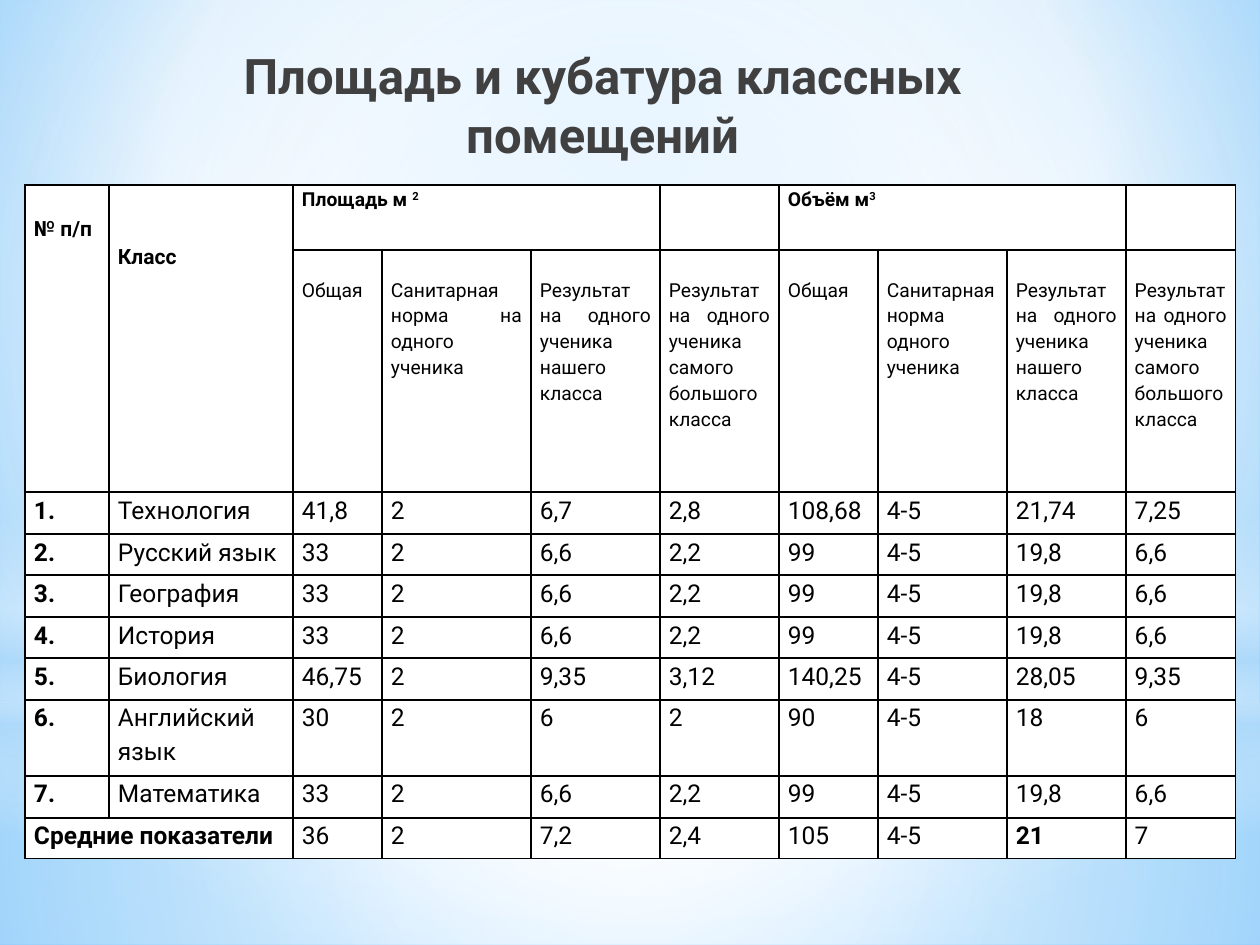
from lxml.etree import SubElement
from pptx import Presentation
from pptx.dml.color import RGBColor
from pptx.enum.shapes import MSO_SHAPE as Preset
from pptx.enum.text import MSO_ANCHOR as Anchor, MSO_AUTO_SIZE as AutoSize, PP_ALIGN as Align
from pptx.oxml.ns import qn
from pptx.util import Pt

EMU_PER_PX = 914400 / 126

COLUMN_WIDTHS = [84, 184, 89, 149, 129, 119, 99, 129, 119, 110]
ROW_HEIGHTS = [65, 242, 42, 41, 42, 41, 42, 76, 42, 41]

OUR_CLASS = "Результат на одного ученика нашего класса"
LARGEST_CLASS = "Результат на одного ученика самого большого класса"
MEASURES = [
    "Общая", "Санитарная норма на одного ученика", OUR_CLASS, LARGEST_CLASS,
    "Общая", "Санитарная норма одного ученика", OUR_CLASS, LARGEST_CLASS,
]
TYPICAL_ROOM = ["33", "2", "6,6", "2,2", "99", "4-5", "19,8", "6,6"]
ROOMS = [
    ("Технология", ["41,8", "2", "6,7", "2,8", "108,68", "4-5", "21,74", "7,25"]),
    ("Русский язык", TYPICAL_ROOM),
    ("География", TYPICAL_ROOM),
    ("История", TYPICAL_ROOM),
    ("Биология", ["46,75", "2", "9,35", "3,12", "140,25", "4-5", "28,05", "9,35"]),
    ("Английский язык", ["30", "2", "6", "2", "90", "4-5", "18", "6"]),
    ("Математика", TYPICAL_ROOM),
]
AVERAGES = ["36", "2", "7,2", "2,4", "105", "4-5", "21", "7"]


def px(length):
    return round(length * EMU_PER_PX)


def rgb(hex_color):
    return RGBColor.from_string(hex_color)


def add_gradient(parent, stops, focus=None):
    """Append a gradient of (position, colour, opacity) percentages.

    focus is the left, top, right, bottom inset of a circular gradient's centre;
    without it the gradient runs from top to bottom.
    """
    gradient = SubElement(parent, qn("a:gradFill"), rotWithShape="1")
    stop_list = SubElement(gradient, qn("a:gsLst"))
    for position, color, opacity in stops:
        stop = SubElement(stop_list, qn("a:gs"), pos=str(position * 1000))
        tint = SubElement(stop, qn("a:srgbClr"), val=color)
        if opacity < 100:
            SubElement(tint, qn("a:alpha"), val=str(opacity * 1000))
    if focus:
        circle = SubElement(gradient, qn("a:path"), path="circle")
        insets = {side: str(inset * 1000) for side, inset in zip("ltrb", focus)}
        SubElement(circle, qn("a:fillToRect"), insets)
    else:
        SubElement(gradient, qn("a:lin"), ang="5400000", scaled="0")
    return gradient


class RoomSlide:
    font = "Roboto"
    ink = "000000"
    title_ink = "404040"
    paper = "FFFFFF"
    center = (50, 50, 50, 50)

    def __init__(self, presentation):
        self.slide = presentation.slides.add_slide(presentation.slide_layouts[5])

    def background(self, stops, focus):
        fill = self.slide.background.fill
        fill.solid()
        properties = self.slide._element.cSld.bg.bgPr
        solid = properties.find(qn("a:solidFill"))
        properties.replace(solid, add_gradient(properties, stops, focus))

    def glow(self, preset, top, height, stops, focus=None):
        """Add a full-width translucent band or ellipse."""
        glow = self.slide.shapes.add_shape(preset, 0, px(top), px(1260), px(height))
        glow.shadow.inherit = False
        glow.line.fill.background()
        glow.fill.solid()
        properties = glow._element.spPr
        solid = properties.find(qn("a:solidFill"))
        properties.replace(solid, add_gradient(properties, stops, focus))

    def title(self, text, left, top, width, height):
        title = self.slide.shapes.title
        self.slide.shapes._spTree.append(title._element)  # in front of the glows
        title.left, title.top, title.width, title.height = map(px, (left, top, width, height))
        frame = title.text_frame
        frame.text = text
        frame.word_wrap = True
        frame.auto_size = AutoSize.NONE
        frame.vertical_anchor = Anchor.TOP
        frame.margin_top = px(9)
        heading = frame.paragraphs[0]
        heading.alignment = Align.CENTER
        self.style(heading.font, 28, True, self.title_ink)

    def style(self, font, size, bold, color):
        font.name, font.size, font.bold = self.font, Pt(size), bold
        font.color.rgb = rgb(color)

    def table(self, left, top, widths, heights):
        frame = self.slide.shapes.add_table(
            len(heights), len(widths), px(left), px(top), px(sum(widths)), px(sum(heights)))
        table = frame.table
        table.first_row = table.horz_banding = False
        for column, width in zip(table.columns, widths):
            column.width = px(width)
        for row, height in zip(table.rows, heights):
            row.height = px(height)
        for cell in table.iter_cells():
            self.frame_cell(cell)
        return table

    def frame_cell(self, cell):
        cell.margin_left = cell.margin_right = px(9)
        cell.margin_top = cell.margin_bottom = 0
        cell.fill.solid()
        cell.fill.fore_color.rgb = rgb(self.paper)
        properties = cell._tc.tcPr
        for index, side in enumerate("LRTB"):
            border = SubElement(properties, qn(f"a:ln{side}"), w=str(Pt(1)))
            solid = SubElement(border, qn("a:solidFill"))
            SubElement(solid, qn("a:srgbClr"), val=self.ink)
            properties.insert(index, border)

    def cell_text(self, cell, text, size=14, bold=False, align=Align.LEFT, drop=0, power=""):
        """Fill a cell; drop lowers the text, power is a raised suffix."""
        cell.margin_top = px(drop)
        entry = cell.text_frame.paragraphs[0]
        entry.alignment = align
        entry.line_spacing = 1.15
        self.style(entry.font, size, bold, self.ink)
        entry.add_run().text = text
        if power:
            raised = entry.add_run()
            raised.text = power
            raised.font._element.set("baseline", "30000")


def main():
    presentation = Presentation()
    presentation.slide_width, presentation.slide_height = px(1260), px(945)
    page = RoomSlide(presentation)

    page.background([(0, "9ED5FF", 100), (60, "FFFFFF", 100), (100, "5BB9FF", 100)],
                    (20, 10, 20, 60))
    page.glow(Preset.RECTANGLE, 703, 242,
              [(0, "FFFFFF", 91), (37, "FFFFFF", 76), (100, "B4DCFA", 79)], page.center)
    page.glow(Preset.RECTANGLE, 0, 703,
              [(0, "FFFFFF", 89), (48, "FFFFFF", 62), (100, "B4DCFA", 79)], page.center)
    page.glow(Preset.RECTANGLE, 519, 315,
              [(0, "FFFFFF", 0), (29, "FFFFFF", 30), (45, "B4DCFA", 40),
               (55, "FFFFFF", 26), (65, "B4DCFA", 60), (100, "FFFFFF", 0)])
    page.glow(Preset.OVAL, 220, 703, [(0, "FFFFFF", 100), (56, "FFFFFF", 0)], page.center)

    page.title("Площадь и кубатура классных помещений", 154, 37, 897, 157)

    rooms = page.table(25, 185, COLUMN_WIDTHS, ROW_HEIGHTS)
    last = len(ROW_HEIGHTS) - 1
    for first_cell, end_cell in [((0, 0), (1, 0)), ((0, 1), (1, 1)), ((0, 2), (0, 4)),
                                 ((0, 6), (0, 8)), ((last, 0), (last, 1))]:
        rooms.cell(*first_cell).merge(rooms.cell(*end_cell))

    header = {"bold": True, "align": Align.JUSTIFY}
    page.cell_text(rooms.cell(0, 0), "№ п/п", 12, drop=28, **header)
    page.cell_text(rooms.cell(0, 1), "Класс", 12, drop=56, **header)
    page.cell_text(rooms.cell(0, 2), "Площадь м ", 11, power="2", **header)
    page.cell_text(rooms.cell(0, 6), "Объём м", 11, power="3", **header)
    for column, measure in enumerate(MEASURES, 2):
        page.cell_text(rooms.cell(1, column), measure, 11, align=Align.JUSTIFY, drop=26)

    for number, (subject, values) in enumerate(ROOMS, 1):
        row = number + 1
        page.cell_text(rooms.cell(row, 0), f"{number}.", bold=True)
        for column, entry in enumerate([subject, *values], 1):
            page.cell_text(rooms.cell(row, column), entry)

    page.cell_text(rooms.cell(last, 0), "Средние показатели", bold=True)
    for column, average in enumerate(AVERAGES, 2):
        page.cell_text(rooms.cell(last, column), average, bold=average == "21")

    presentation.save("out.pptx")


if __name__ == "__main__":
    main()
